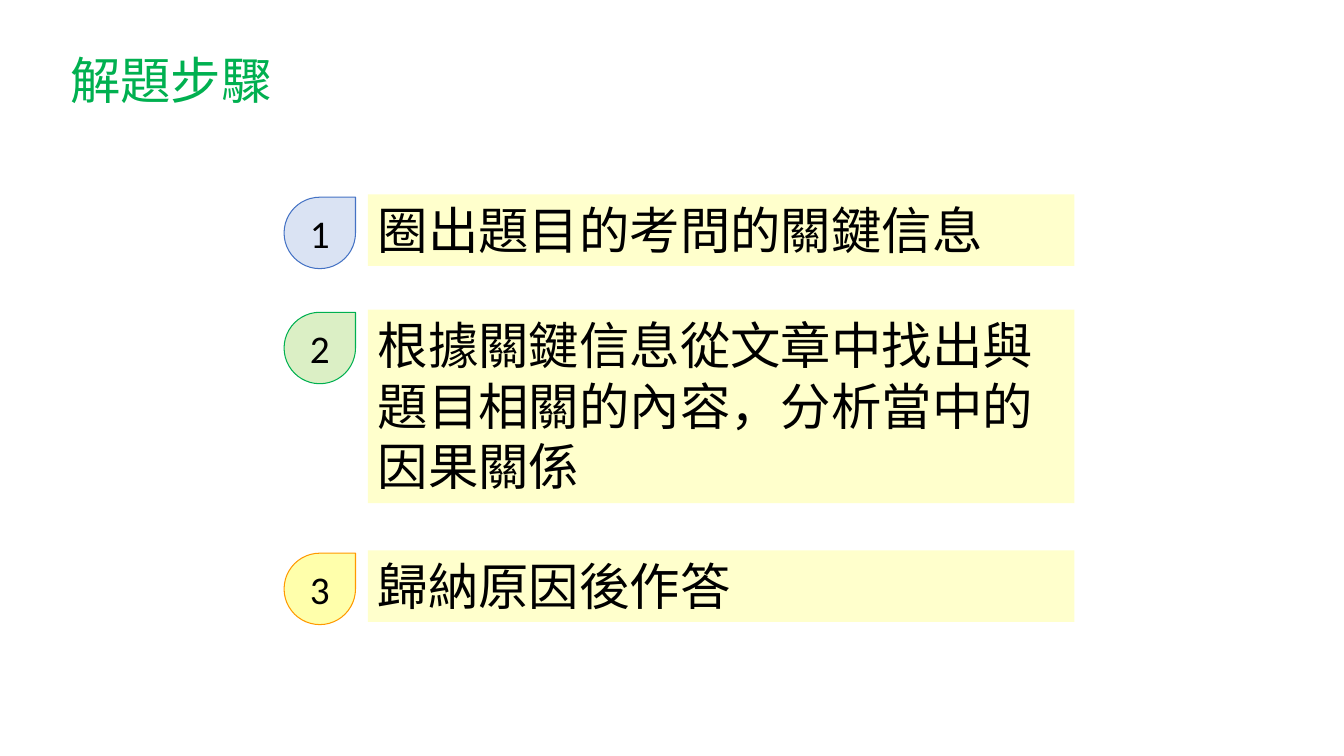
from lxml import etree
from pptx import Presentation
from pptx.dml.color import RGBColor
from pptx.enum.shapes import MSO_SHAPE
from pptx.enum.text import MSO_ANCHOR, MSO_AUTO_SIZE, PP_ALIGN
from pptx.oxml.ns import qn
from pptx.util import Cm, Pt

RECT, DROP = MSO_SHAPE.RECTANGLE, MSO_SHAPE.TEAR
LEFT, CENTER = PP_ALIGN.LEFT, PP_ALIGN.CENTER
TOP, MIDDLE = MSO_ANCHOR.TOP, MSO_ANCHOR.MIDDLE
GROW = MSO_AUTO_SIZE.SHAPE_TO_FIT_TEXT
LATIN, CJK = "Calibri", "Noto Sans CJK SC"
COLORS = {
    "title": "00B050", "text": "000000", "panel": "FFFFCC",
    "blue": "8FAADC", "blue line": "4472C4",
    "green": "92D050", "green line": "00B050",
    "yellow": "FFFF00", "yellow line": "FF9900",
}
SIDE = 1.8    # badge size
STEPS = [     # top, height, badge colour, text
    (4.9, 1.8, "blue", "圈出題目的考問的關鍵信息"),
    (7.8, 4.88, "green", "根據關鍵信息從文章中找出與題目相關的內容，分析當中的因果關係"),
    (13.87, 1.8, "yellow", "歸納原因後作答"),
]


def color(name):
    return RGBColor.from_string(COLORS[name])


def write(shape, text, size, tone="text", face=LATIN, align=LEFT, anchor=TOP):
    frame = shape.text_frame
    frame.text = text
    frame.word_wrap = True
    frame.vertical_anchor = anchor
    para = frame.paragraphs[0]
    para.alignment = align
    font = para.runs[0].font
    font.name, font.size = face, Pt(size)
    font.color.rgb = color(tone)
    props = para.runs[0]._r.get_or_add_rPr()
    props.find(qn("a:latin")).addnext(
        props.makeelement(qn("a:ea"), {"typeface": CJK}))
    return frame


def add_form(slide, kind, box, fill):
    shape = slide.shapes.add_shape(kind, *map(Cm, box))
    shape.shadow.inherit = False
    shape.fill.solid()
    shape.fill.fore_color.rgb = color(fill)
    shape.line.fill.background()
    return shape


def add_title(slide, box, text):
    frame = write(slide.shapes.add_textbox(*map(Cm, box)), text, 36, "title", CJK)
    frame.word_wrap = False
    frame.auto_size = GROW


def add_badge(slide, box, number, tone):
    """Draw a numbered teardrop with a see-through fill."""
    drop = add_form(slide, DROP, box, tone)
    fill = drop.fill._xPr.find(qn("a:solidFill"))
    etree.SubElement(fill[0], qn("a:alpha"), val="33000")
    drop.line.color.rgb = color(tone + " line")
    drop.line.width = Pt(0.75)
    write(drop, str(number), 28, align=CENTER, anchor=MIDDLE)


def add_step(slide, box, number, tone, text):
    """Place a badge at the left of the box and its panel in the rest."""
    left, top, width, height = box
    inset = SIDE + 0.31
    panel = add_form(slide, RECT, (left + inset, top, width - inset, height), "panel")
    write(panel, text, 36).auto_size = GROW
    add_badge(slide, (left, top + 0.07, SIDE, SIDE), number, tone)


def main():
    deck = Presentation()
    deck.slide_width, deck.slide_height = Cm(33.87), Cm(19.05)
    slide = deck.slides.add_slide(deck.slide_layouts[6])
    add_title(slide, (1.52, 1.12, 5.64, 1.8), "解題步驟")
    for number, (top, height, tone, text) in enumerate(STEPS, 1):
        add_step(slide, (7.16, top, 19.92, height), number, tone, text)
    deck.save("out.pptx")


if __name__ == "__main__":
    main()
